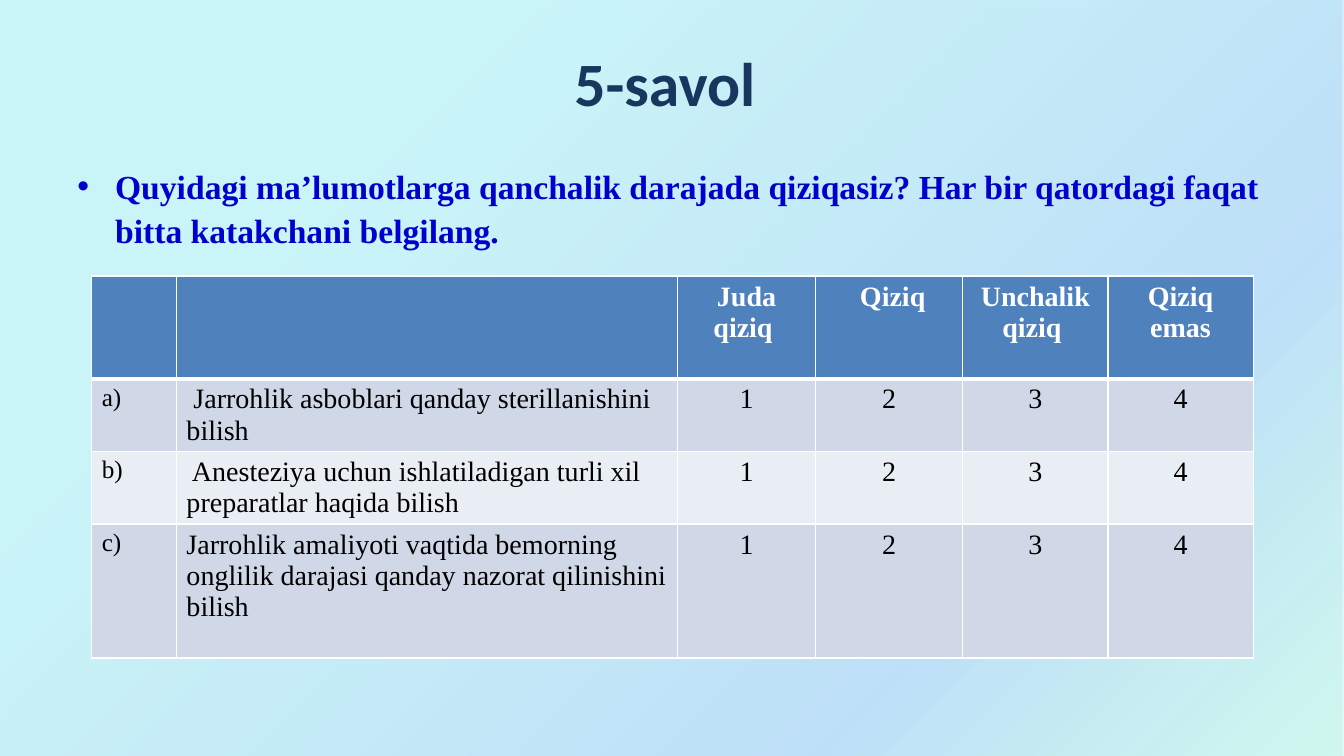
from lxml.etree import SubElement
from pptx import Presentation
from pptx.dml.color import RGBColor
from pptx.enum.shapes import MSO_SHAPE
from pptx.enum.text import MSO_ANCHOR, MSO_AUTO_SIZE, PP_ALIGN
from pptx.oxml import parse_xml
from pptx.oxml.ns import nsdecls, qn
from pptx.util import Inches, Pt

SLIDE_WIDTH, SLIDE_HEIGHT = Inches(13.33), Inches(7.5)
GRID_COLUMNS, GRID_ROWS = 40, 25
COLORS = {
    "title": "17375E",
    "question": "0000CC",
    "header": "4F81BD",
    "odd_row": "D0D8E8",
    "even_row": "E9EDF4",
    "white": "FFFFFF",
    "black": "000000",
}
BACKGROUND_STOPS = [
    (25, "21D6E0", 23),
    (75, "0087E6", 25),
    (100, "03D4A8", 18),
    (100, "005CBF", 26),
]
SERIF = "Times New Roman"
COLUMN_SHARES = [0.84, 4.97, 1.37, 1.46, 1.44, 1.44]
ROW_SHARES = [1.02, 0.72, 0.72, 1.33]
HEADINGS = ["", "", "Juda qiziq ", " Qiziq", "Unchalik qiziq ", "Qiziq emas"]
STATEMENTS = [
    " Jarrohlik asboblari qanday sterillanishini bilish",
    " Anesteziya uchun ishlatiladigan turli xil preparatlar haqida bilish",
    "Jarrohlik amaliyoti vaqtida bemorning onglilik darajasi qanday nazorat qilinishini bilish",
]
RATINGS = ["1", "2", "3", "4"]


def grid_box(column, row, columns, rows):
    return (
        round(SLIDE_WIDTH * column / GRID_COLUMNS),
        round(SLIDE_HEIGHT * row / GRID_ROWS),
        round(SLIDE_WIDTH * columns / GRID_COLUMNS),
        round(SLIDE_HEIGHT * rows / GRID_ROWS),
    )


def write_text(frame, text, size=20, font=SERIF, color="black", bold=False,
               align=PP_ALIGN.LEFT, line_spacing=1.0):
    frame.word_wrap = True
    paragraph = frame.paragraphs[0]
    paragraph.alignment = align
    paragraph.space_before = Pt(0)
    paragraph.line_spacing = line_spacing
    paragraph.font.size = Pt(size)
    run = paragraph.add_run()
    run.text = text
    run.font.size = Pt(size)
    run.font.name = font
    run.font.bold = bold
    run.font.color.rgb = RGBColor.from_string(COLORS[color])


def place(shape, box):
    shape.left, shape.top, shape.width, shape.height = box


def add_background(slide, box):
    shape = slide.shapes.add_shape(MSO_SHAPE.RECTANGLE, *box)
    shape.shadow.inherit = False
    shape.line.fill.background()
    shape.fill.gradient()
    gradient = shape.fill._xPr.find(qn("a:gradFill"))
    stops = "".join(
        f'<a:gs pos="{position * 1000}"><a:srgbClr val="{color}">'
        f'<a:alpha val="{opacity * 1000}"/></a:srgbClr></a:gs>'
        for position, color, opacity in BACKGROUND_STOPS
    )
    gradient.getparent().replace(gradient, parse_xml(
        f'<a:gradFill {nsdecls("a")} rotWithShape="1"><a:gsLst>{stops}</a:gsLst>'
        '<a:lin ang="2700000" scaled="0"/></a:gradFill>'
    ))
    slide.shapes._spTree.insert(2, shape._element)


def add_title(slide, box):
    title = slide.shapes.title
    place(title, box)
    title.text_frame.vertical_anchor = MSO_ANCHOR.MIDDLE
    write_text(title.text_frame, "5-savol ", size=44, font="Calibri",
               color="title", bold=True, align=PP_ALIGN.CENTER)


def add_question(slide, box):
    body = slide.placeholders[1]
    place(body, box)
    body.text_frame.auto_size = MSO_AUTO_SIZE.NONE
    write_text(
        body.text_frame,
        "Quyidagi ma’lumotlarga qanchalik darajada qiziqasiz? "
        "Har bir qatordagi faqat bitta katakchani belgilang.",
        size=24, color="question", bold=True, line_spacing=1.1,
    )


def set_borders(cell, top=1, bottom=1):
    properties = cell._tc.get_or_add_tcPr()
    widths = {"lnL": 1, "lnR": 1, "lnT": top, "lnB": bottom}
    for index, (side, width) in enumerate(widths.items()):
        line = SubElement(properties, qn(f"a:{side}"), w=str(Pt(width)))
        fill = SubElement(line, qn("a:solidFill"))
        SubElement(fill, qn("a:srgbClr"), val=COLORS["white"])
        properties.insert(index, line)


def add_answers(slide, box):
    rows = [HEADINGS] + [
        [f"{letter})", statement, *RATINGS]
        for letter, statement in zip("abc", STATEMENTS)
    ]
    left, top, width, height = box
    table = slide.shapes.add_table(len(rows), len(HEADINGS), *box).table
    for column, share in zip(table.columns, COLUMN_SHARES):
        column.width = round(width * share / sum(COLUMN_SHARES))
    for row, share in zip(table.rows, ROW_SHARES):
        row.height = round(height * share / sum(ROW_SHARES))
    for row_index, texts in enumerate(rows):
        is_header = row_index == 0
        fill = "header" if is_header else "odd_row" if row_index % 2 else "even_row"
        for column_index, text in enumerate(texts):
            cell = table.cell(row_index, column_index)
            cell.fill.solid()
            cell.fill.fore_color.rgb = RGBColor.from_string(COLORS[fill])
            set_borders(cell, top=3 if row_index == 1 else 1,
                        bottom=3 if is_header else 1)
            if text:
                write_text(
                    cell.text_frame, text,
                    size=18 if column_index == 0 else 20,
                    color="white" if is_header else "black",
                    bold=is_header,
                    align=PP_ALIGN.CENTER if column_index > 1 else PP_ALIGN.LEFT,
                )


def main():
    presentation = Presentation()
    presentation.slide_width = SLIDE_WIDTH
    presentation.slide_height = SLIDE_HEIGHT
    slide = presentation.slides.add_slide(presentation.slide_layouts[1])
    add_background(slide, grid_box(0, 0, GRID_COLUMNS, GRID_ROWS))
    add_title(slide, grid_box(2, 1, 36, 3.4))
    add_question(slide, grid_box(2, 5.17, 36, 18.83))
    add_answers(slide, grid_box(2.73, 9.13, 34.57, 12.63))
    presentation.save("out.pptx")


if __name__ == "__main__":
    main()
